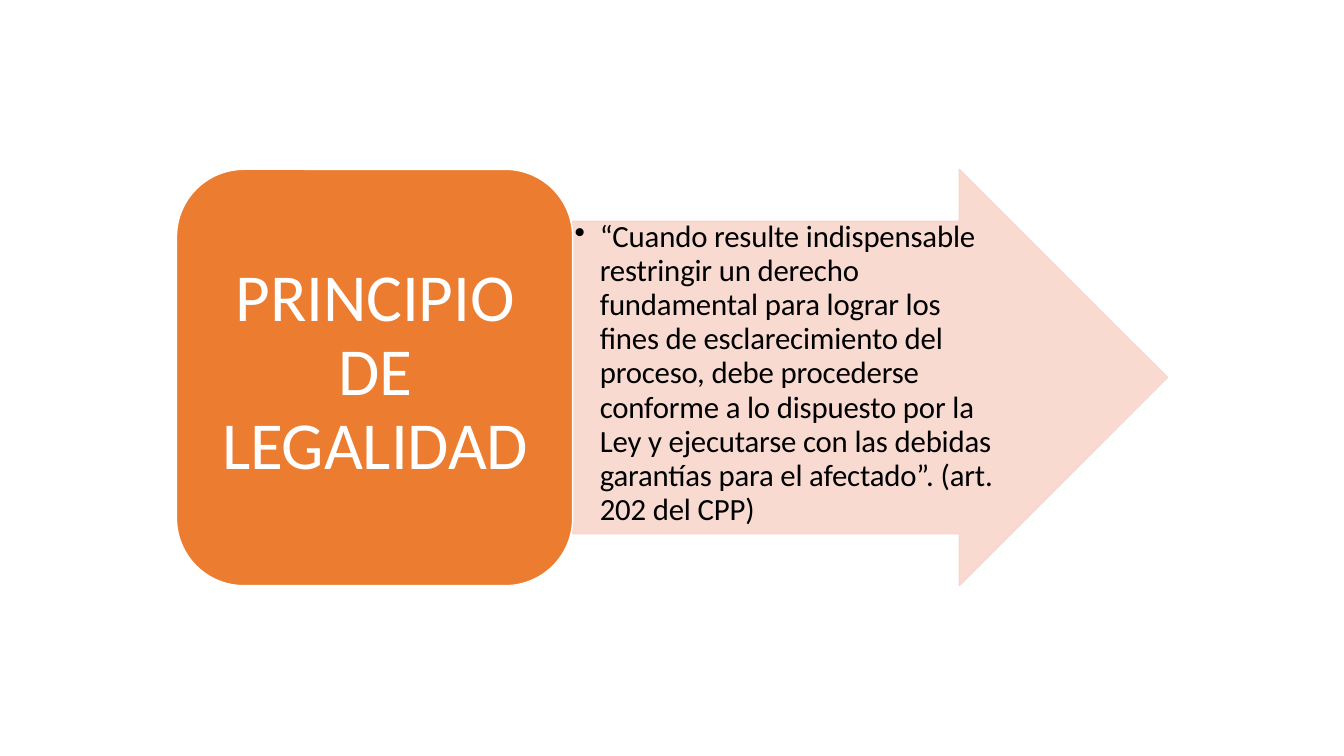
import dataclasses

import lxml.etree
import pptx
import pptx.dml.color
import pptx.enum.shapes
import pptx.enum.text
import pptx.oxml.ns
import pptx.util

SLIDE_WIDTH = pptx.util.Inches(13.33)
SLIDE_HEIGHT = pptx.util.Inches(7.5)
BAND_TOP, BAND_HEIGHT = 22.4, 55.07
BADGE_LEFT, BADGE_WIDTH = 13.13, 29.48
ARROW_WIDTH = 44.26

PRINCIPLE = "PRINCIPIO DE LEGALIDAD"
QUOTATION = (
    "“Cuando resulte indispensable restringir un derecho fundamental para lograr los "
    "fines de esclarecimiento del proceso, debe procederse conforme a lo dispuesto por la "
    "Ley y ejecutarse con las debidas garantías para el afectado”. (art. 202 del CPP)"
)


@dataclasses.dataclass(frozen=True)
class Theme:
    """Colours, typeface and type sizes of the slide."""
    badge: str = "EC7C30"
    arrow: str = "F8D6CD"
    light: str = "FFFFFF"
    dark: str = "000000"
    font: str = "Calibri"
    title_size: int = 48
    body_size: int = 22
    line_spacing: float = 0.92


THEME = Theme()


def rgb(colour):
    """Turn a hex string into a colour value."""
    return pptx.dml.color.RGBColor.from_string(colour)


def area(left, top, width, height):
    """Convert percentages of the slide into lengths."""
    return (
        int(SLIDE_WIDTH * left / 100),
        int(SLIDE_HEIGHT * top / 100),
        int(SLIDE_WIDTH * width / 100),
        int(SLIDE_HEIGHT * height / 100),
    )


def add_panel(slide, preset, place, adjustments, fill, outline, opacity=100):
    """Add a filled preset shape with a thin outline."""
    panel = slide.shapes.add_shape(preset, *place)
    panel.shadow.inherit = False
    for index, share in enumerate(adjustments):
        panel.adjustments[index] = share
    panel.fill.solid()
    panel.fill.fore_color.rgb = rgb(fill)
    if opacity < 100:
        colour = panel._element.spPr.find(
            pptx.oxml.ns.qn("a:solidFill") + "/" + pptx.oxml.ns.qn("a:srgbClr"))
        alpha = lxml.etree.SubElement(colour, pptx.oxml.ns.qn("a:alpha"))
        alpha.set("val", str(opacity * 1000))
    panel.line.color.rgb = rgb(outline)
    panel.line.width = pptx.util.Pt(1)


def write(holder, wording, size, colour, alignment, top_inset, space_before):
    """Set and format one wrapped paragraph, and return it."""
    frame = holder.text_frame
    frame.text = wording
    frame.word_wrap = True
    frame.auto_size = pptx.enum.text.MSO_AUTO_SIZE.NONE
    frame.vertical_anchor = pptx.enum.text.MSO_ANCHOR.TOP
    frame.margin_left = frame.margin_right = frame.margin_bottom = 0
    frame.margin_top = pptx.util.Inches(top_inset)
    paragraph = frame.paragraphs[0]
    paragraph.alignment = alignment
    paragraph.line_spacing = THEME.line_spacing
    paragraph.space_before = pptx.util.Pt(space_before)
    for run in paragraph.runs:
        run.font.name = THEME.font
        run.font.size = pptx.util.Pt(size)
        run.font.color.rgb = rgb(colour)
        run._r.get_or_add_rPr().set("spc", "-10")
    return paragraph


def add_bullet(paragraph, margin, indent):
    """Give a paragraph a round bullet and a hanging indent."""
    properties = paragraph._p.get_or_add_pPr()
    properties.set("marL", str(int(pptx.util.Inches(margin))))
    properties.set("indent", str(int(pptx.util.Inches(indent))))
    bullet = lxml.etree.SubElement(properties, pptx.oxml.ns.qn("a:buChar"))
    bullet.set("char", "•")


def place_title(slide, place):
    """Move the title placeholder over the badge and write the principle."""
    title = slide.shapes.title
    title.left, title.top, title.width, title.height = place
    write(title, PRINCIPLE, THEME.title_size, THEME.light,
          pptx.enum.text.PP_ALIGN.CENTER, 0.08, 5.8)
    slide.shapes._spTree.append(title._element)


def add_quotation(slide, place):
    """Add the bulleted quotation on the arrow."""
    quotation = slide.shapes.add_textbox(*place)
    paragraph = write(quotation, QUOTATION, THEME.body_size, THEME.dark,
                      pptx.enum.text.PP_ALIGN.LEFT, 0.04, 3.1)
    add_bullet(paragraph, 0.26, -0.25)


def main():
    """Build the slide and save it."""
    presentation = pptx.Presentation()
    presentation.slide_width = SLIDE_WIDTH
    presentation.slide_height = SLIDE_HEIGHT
    slide = presentation.slides.add_slide(presentation.slide_layouts[5])
    presets = pptx.enum.shapes.MSO_SHAPE
    add_panel(slide, presets.RIGHT_ARROW,
              area(BADGE_LEFT + BADGE_WIDTH, BAND_TOP, ARROW_WIDTH, BAND_HEIGHT),
              (0.75, 0.5), THEME.arrow, THEME.arrow, opacity=90)
    add_quotation(slide, area(42.68, 28.67, 31.43, 41.07))
    add_panel(slide, presets.ROUNDED_RECTANGLE,
              area(BADGE_LEFT, BAND_TOP, BADGE_WIDTH, BAND_HEIGHT),
              (0.17,), THEME.badge, THEME.light)
    place_title(slide, area(16.13, 33.6, 23.56, 30.53))
    presentation.save("out.pptx")


if __name__ == "__main__":
    main()
